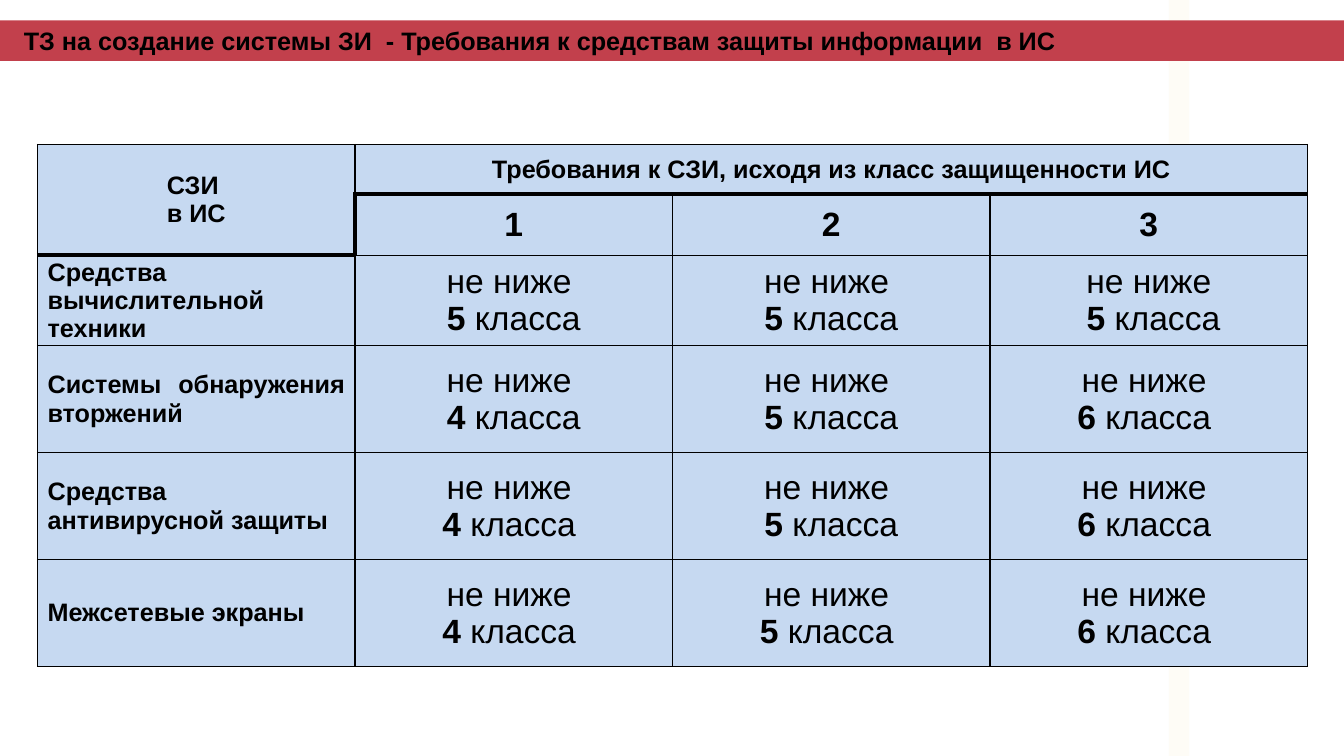
"""Builds a slide with a table of protection tool requirements by system class."""
from dataclasses import dataclass

from lxml.etree import SubElement as Sub
from pptx import Presentation
from pptx.dml.color import RGBColor as Rgb
from pptx.enum.shapes import MSO_SHAPE as Shape
from pptx.enum.text import MSO_ANCHOR as Anchor, MSO_AUTO_SIZE as Auto, PP_ALIGN as Align
from pptx.oxml import parse_xml
from pptx.oxml.ns import nsdecls, qn
from pptx.util import Pt


@dataclass(frozen=True)
class Theme:
    font: str = "Arial"
    ink: str = "000000"
    band: str = "C2404C"
    cell: str = "C6D9F1"
    stripe: str = "F5D66E"
    small: int = 18
    large: int = 24


theme = Theme()


def add_run(para, text, size, bold):
    run = para.add_run()
    run.text = text
    font = run.font
    font.name, font.size, font.bold = theme.font, Pt(size), bold
    font.color.rgb = Rgb.from_string(theme.ink)


def style_cell(cell, edges):
    cell.fill.solid()
    cell.fill.fore_color.rgb = Rgb.from_string(theme.cell)
    cell.vertical_anchor = Anchor.MIDDLE
    cell.margin_left = cell.margin_right = Pt(7.2)
    cell.margin_top = cell.margin_bottom = Pt(0)
    props = cell._tc.get_or_add_tcPr()
    for place, (side, thick) in enumerate(edges.items()):
        width = Pt(3 if thick else 1)
        props.insert(place, parse_xml(
            f'<a:ln{side} {nsdecls("a")} w="{width}"><a:solidFill>'
            f'<a:srgbClr val="{theme.ink}"/></a:solidFill></a:ln{side}>'))


deck = Presentation()
deck.slide_width, deck.slide_height = Pt(960), Pt(540)
slide = deck.slides.add_slide(deck.slide_layouts[5])
shapes = slide.shapes

stripe = shapes.add_shape(Shape.RECTANGLE, Pt(835), Pt(0), Pt(14.4), Pt(540))
stripe.shadow.inherit = False
stripe.line.fill.background()
stripe.fill.solid()
stripe.fill.fore_color.rgb = Rgb.from_string(theme.stripe)
tint = stripe._element.spPr.find(".//" + qn("a:srgbClr"))
Sub(tint, qn("a:alpha"), val="6000")
shapes._spTree.insert(2, stripe._element)

title = shapes.title
title.left, title.top, title.width, title.height = Pt(0), Pt(14.6), Pt(960), Pt(29)
title.fill.solid()
title.fill.fore_color.rgb = Rgb.from_string(theme.band)
frame = title.text_frame
frame.auto_size, frame.word_wrap = Auto.NONE, True
frame.vertical_anchor = Anchor.MIDDLE
frame.margin_left = Pt(17)
frame.margin_top = frame.margin_right = frame.margin_bottom = Pt(3.6)
para = frame.paragraphs[0]
para.alignment = Align.LEFT
add_run(para, "ТЗ на создание системы ЗИ  - Требования к средствам защиты информации  в ИС",
        theme.small, True)

tools = [
    ("Средства вычислительной техники", ["5 класса", "5 класса", " 5 класса"]),
    ("Системы обнаружения вторжений ", ["4 класса", "5 класса", "6 класса "]),
    ("Средства антивирусной защиты", ["4 класса ", "5 класса", "6 класса "]),
    ("Межсетевые экраны ", ["4 класса ", "5 класса ", "6 класса "]),
]
heights = [35.6, 43.6, 64.6, 76.4, 76.4, 76.4]
table = shapes.add_table(len(heights), 4, Pt(26.8), Pt(103.2),
                         Pt(907.2), Pt(sum(heights))).table
table.first_row = table.horz_banding = False
for col in table.columns:
    col.width = Pt(226.8)
for row, height in zip(table.rows, heights):
    row.height = Pt(height)

for r in range(len(heights)):
    for c in range(4):
        style_cell(table.cell(r, c), {
            "L": (r, c) == (1, 1),
            "R": (r, c) == (1, 0),
            "T": (r == 1 and c > 0) or (r, c) == (2, 0),
            "B": r == 0 or (r, c) == (1, 0),
        })
table.cell(0, 0).merge(table.cell(1, 0))
table.cell(0, 1).merge(table.cell(0, 3))

corner = table.cell(0, 0).text_frame
for para, text in [(corner.paragraphs[0], "СЗИ "), (corner.add_paragraph(), "в ИС")]:
    para.alignment = Align.CENTER
    add_run(para, text, theme.small, True)

heads = [(0, 1, "Требования к СЗИ, исходя из класс защищенности ИС", theme.small)]
heads += [(1, c, str(c), theme.large) for c in (1, 2, 3)]
for r, c, text, size in heads:
    para = table.cell(r, c).text_frame.paragraphs[0]
    para.alignment = Align.CENTER
    add_run(para, text, size, True)

for r, (tool, grades) in enumerate(tools, 2):
    para = table.cell(r, 0).text_frame.paragraphs[0]
    para.alignment = Align.JUSTIFY
    add_run(para, tool, theme.small, True)
    for c, grade in enumerate(grades, 1):
        frame = table.cell(r, c).text_frame
        first, second = frame.paragraphs[0], frame.add_paragraph()
        first.alignment = second.alignment = Align.CENTER
        add_run(first, "не ниже" if grade.startswith(" ") else "не ниже ", theme.large, False)
        digit = grade.strip()[0]
        for part in grade.partition(digit):
            if part:
                add_run(second, part, theme.large, part == digit)

deck.save("out.pptx")
